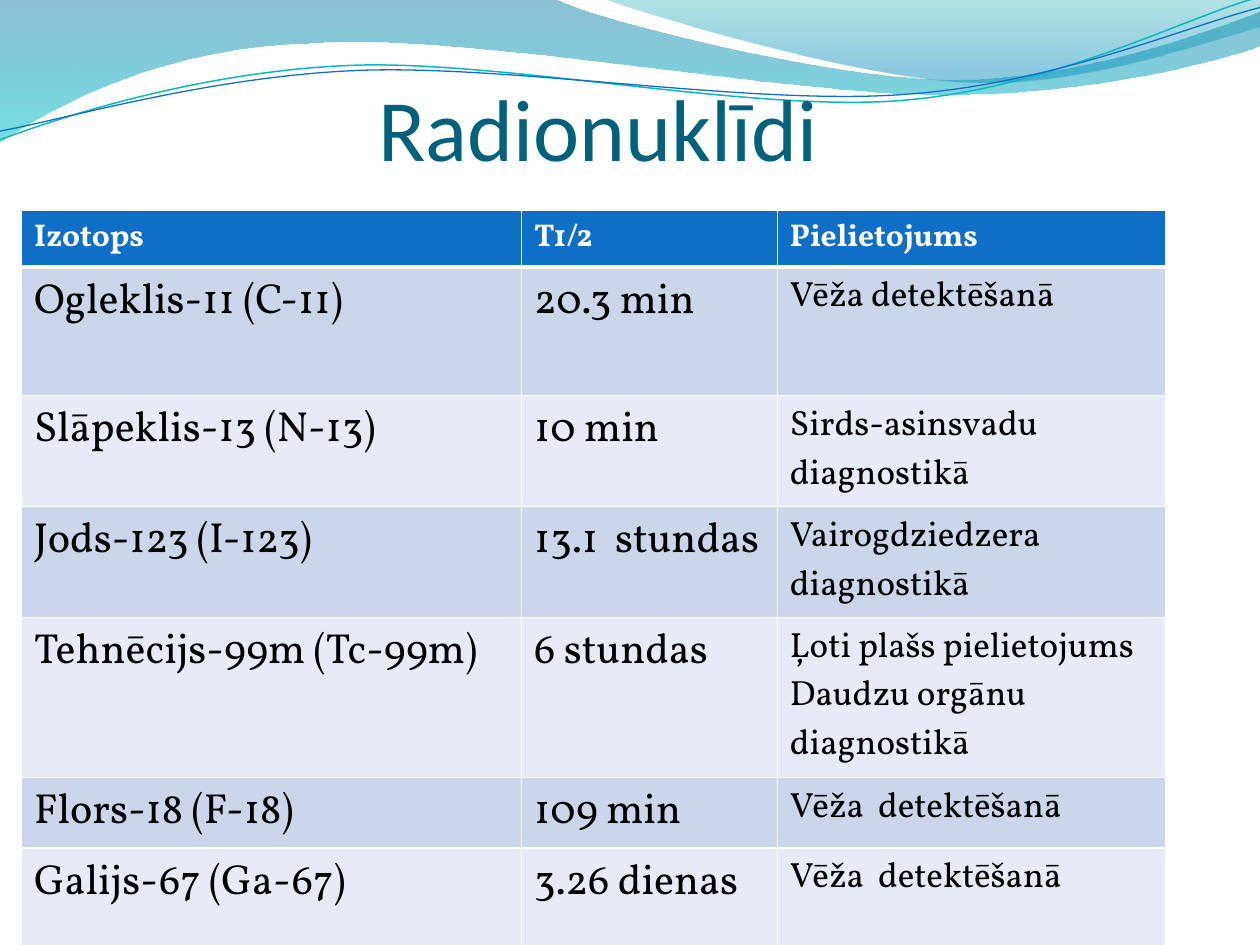
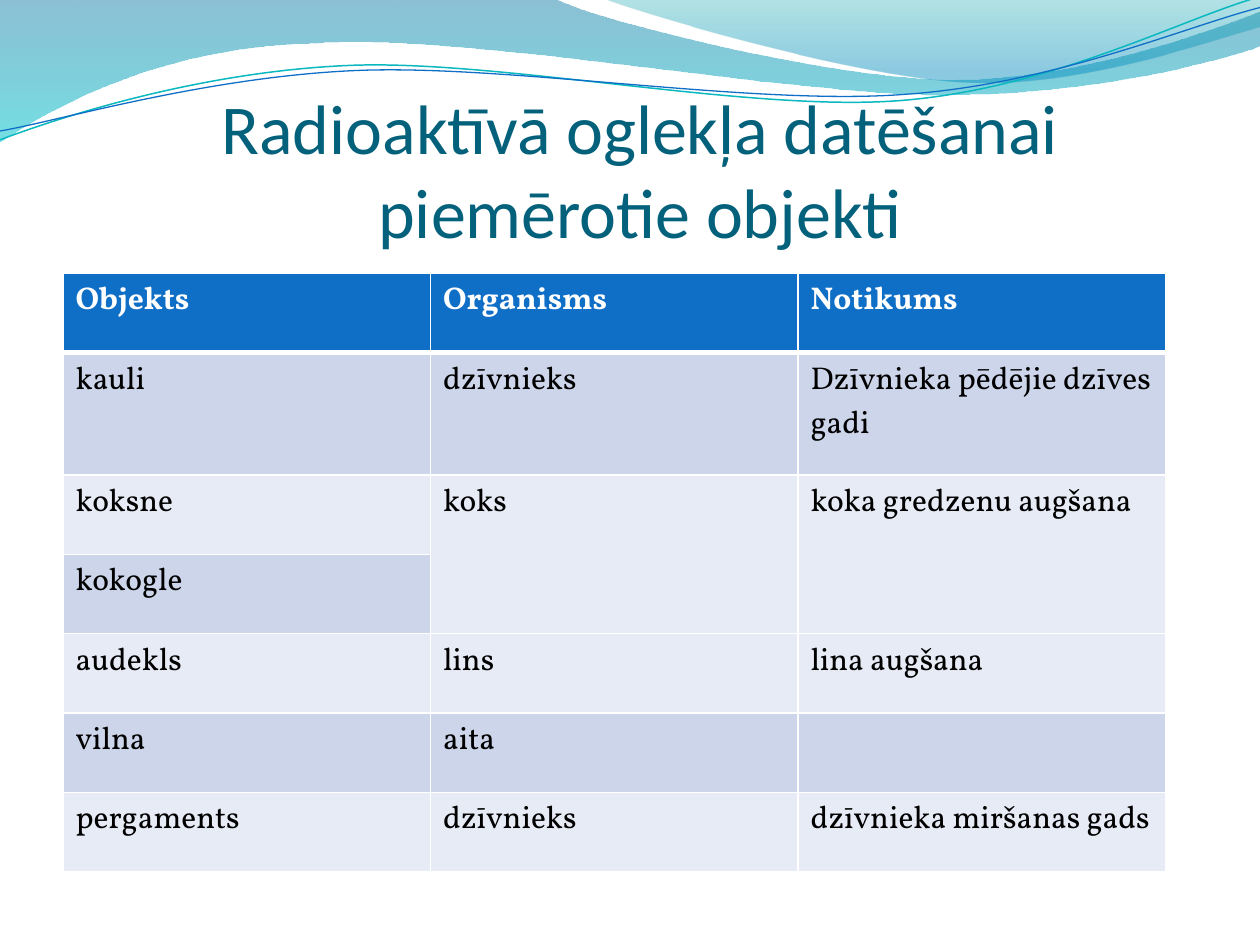
from lxml.etree import SubElement as Sub
from pptx import Presentation
from pptx.dml.color import RGBColor as Rgb
from pptx.enum.text import MSO_ANCHOR as Anchor, PP_ALIGN as Align
from pptx.oxml.ns import qn
from pptx.util import Inches, Pt

WHITE = Rgb(0xFF, 0xFF, 0xFF)
BLACK = Rgb(0x00, 0x00, 0x00)
BLUE = Rgb(0x0F, 0x6F, 0xC6)
DEEP = Rgb(0x04, 0x61, 0x7B)
AQUA = Rgb(0x0A, 0xB8, 0xBF)
DARK = Rgb(0xCC, 0xD5, 0xEA)
PALE = Rgb(0xE7, 0xEB, 0xF5)

BANDS = [
    ([[(0, 0)], [(4.4, -0.01)],
      [(4.76, 0.17), (6.64, 0.63), (7.58, 0.63)],
      [(8.53, 0.63), (9.58, 0.26), (10, 0.09)], [(10.01, 0.36)],
      [(9.83, 0.44), (8.7, 0.76), (7.46, 0.75)],
      [(6.22, 0.75), (3.82, 0.28), (2.57, 0.34)],
      [(1.29, 0.36), (0.46, 0.83), (-0.01, 1.13)], [(0, 0)]],
     [(0, Rgb(0x00, 0x74, 0xA1), 45), (1, Rgb(0x00, 0xC6, 0xCF), 55)]),
    ([[(4.79, -0.01)],
      [(5.09, 0.11), (6.82, 0.62), (7.69, 0.65)],
      [(8.56, 0.69), (9.61, 0.32), (10, 0.21)], [(10, 0)], [(4.79, -0.01)]],
     [(0, Rgb(0x00, 0xA1, 0xA9), 30), (0.8, Rgb(0x00, 0x8B, 0xBF), 45)]),
]
WAVES = [
    ([[(0, 1.11)],
      [(0.48, 0.93), (1.58, 0.57), (2.77, 0.52)],
      [(3.95, 0.47), (5.93, 0.89), (7.13, 0.8)],
      [(8.33, 0.71), (9.38, 0.15), (9.98, -0.02)]], AQUA, 0.85),
    ([[(0, 1.04)],
      [(0.47, 0.96), (1.64, 0.61), (2.83, 0.56)],
      [(4.03, 0.51), (5.97, 0.84), (7.17, 0.75)],
      [(8.36, 0.67), (9.41, 0.21), (10, 0.06)]], BLUE, 0.75),
]

NUCLIDES = [
    ["Izotops", "T1/2", "Pielietojums"],
    ["Ogleklis-11 (C-11)", "20.3 min", "Vēža detektēšanā"],
    ["Slāpeklis-13 (N-13)", "10 min", "Sirds-asinsvadu diagnostikā"],
    ["Jods-123 (I-123)", "13.1  stundas", "Vairogdziedzera diagnostikā"],
    ["Tehnēcijs-99m (Tc-99m)", "6 stundas",
     "Ļoti plašs pielietojums\nDaudzu orgānu diagnostikā"],
    ["Flors-18 (F-18)", "109 min", "Vēža  detektēšanā"],
    ["Galijs-67 (Ga-67)", "3.26 dienas", "Vēža  detektēšanā"],
]
OBJECTS = [
    ["Objekts", "Organisms", "Notikums"],
    ["kauli", "dzīvnieks", "Dzīvnieka pēdējie dzīves gadi"],
    ["koksne", "koks", "koka gredzenu augšana"],
    ["kokogle", "", ""],
    ["audekls", "lins", "lina augšana"],
    ["vilna", "aita", ""],
    ["pergaments", "dzīvnieks", "dzīvnieka miršanas gads"],
]


class Deck:
    def __init__(self):
        self.show = Presentation()
        self.show.slide_width = Inches(10)
        self.show.slide_height = Inches(7.5)
        self.slide = None

    def page(self):
        self.slide = self.show.slides.add_slide(self.show.slide_layouts[6])
        for route, stops in BANDS:
            self.band(route, stops)
        for route, color, width in WAVES:
            self.wave(route, color, width)

    def curve(self, route, close):
        spots = [(Inches(x), Inches(y)) for part in route for x, y in part]
        pen = self.slide.shapes.build_freeform(*spots[0])
        pen.add_line_segments(spots[1:], close=close)
        shape = pen.convert_to_shape()
        shape.shadow.inherit = False
        legs = iter(list(shape.element.iter(qn("a:lnTo"))))
        for part in route[1:]:
            first, *rest = [next(legs) for _ in part]
            if rest:
                bend = first.makeelement(qn("a:cubicBezTo"))
                first.addprevious(bend)
                for leg in (first, *rest):
                    bend.append(leg[0])
                    leg.getparent().remove(leg)
        return shape

    def band(self, route, stops):
        shape = self.curve(route, True)
        shape.line.fill.background()
        shape.fill.gradient()
        shape.fill.gradient_angle = 270
        for stop, (place, color, _) in zip(shape.fill.gradient_stops, stops):
            stop.position = place
            stop.color.rgb = color
        tints = shape.element.spPr.iter(qn("a:srgbClr"))
        for tint, (_, _, alpha) in zip(list(tints), stops):
            Sub(tint, qn("a:alpha"), val=str(alpha * 1000))

    def wave(self, route, color, width):
        shape = self.curve(route, False)
        shape.fill.background()
        shape.line.color.rgb = color
        shape.line.width = Pt(width)

    def style(self, font, color, **form):
        font.color.rgb = color
        for name, value in form.items():
            setattr(font, name, value)

    def title(self, text, left, top, size):
        box = self.slide.shapes.add_textbox(
            Inches(left), Inches(top), Inches(9), Inches(1.25))
        frame = box.text_frame
        form = {"word_wrap": True, "vertical_anchor": Anchor.BOTTOM,
                "margin_left": 0, "margin_top": Inches(0.05),
                "margin_right": 0, "margin_bottom": 0}
        for name, value in form.items():
            setattr(frame, name, value)
        line = frame.paragraphs[0]
        line.text = text
        line.alignment = Align.CENTER
        for run in line.runs:
            self.style(run.font, DEEP, name="Calibri", size=Pt(size))

    def edge(self, cell, row):
        thick = {"L": 1, "R": 1, "T": 3 if row == 1 else 1,
                 "B": 3 if row == 0 else 1}
        for side, width in thick.items():
            line = Sub(cell._tc.get_or_add_tcPr(), qn("a:ln" + side),
                       w=str(Pt(width)))
            fill = Sub(line, qn("a:solidFill"))
            Sub(fill, qn("a:srgbClr"), val=str(WHITE))

    def cell(self, cell, text, row, size):
        self.edge(cell, row)
        head = row == 0
        cell.fill.solid()
        cell.fill.fore_color.rgb = BLUE if head else DARK if row % 2 else PALE
        if not text:
            return
        cell.text = text
        for line in cell.text_frame.paragraphs:
            for run in line.runs:
                self.style(run.font, WHITE if head else BLACK,
                           name="Vollkorn", bold=head,
                           size=Pt(18 if head else size))

    def table(self, data, left, top, wide, high, sizes, spans=()):
        grid = self.slide.shapes.add_table(
            len(data), len(wide), Inches(left), Inches(top),
            Inches(sum(wide)), Inches(sum(high))).table
        grid.horz_banding = False
        for col, width in zip(grid.columns, wide):
            col.width = Inches(width)
        for row, height in zip(grid.rows, high):
            row.height = Inches(height)
        for r, texts in enumerate(data):
            for c, text in enumerate(texts):
                self.cell(grid.cell(r, c), text, r, sizes[c])
        for first, last in spans:
            grid.cell(*first).merge(grid.cell(*last))


def main():
    deck = Deck()
    deck.page()
    deck.title("Radionuklīdi", 0.25, 0.17, 50)
    deck.table(NUCLIDES, 0.17, 1.67, [3.97, 2.03, 3.08],
               [0.45, 1.02, 0.88, 0.88, 1.27, 0.56, 0.78], [24, 24, 20])

    deck.page()
    deck.title("Radioaktīvā oglekļa datēšanai\vpiemērotie objekti",
               0.58, 0.75, 40)
    deck.table(OBJECTS, 0.5, 2.17, [8.75 / 3] * 3,
               [0.63, 0.97] + [0.63] * 5, [18] * 3,
               [((2, c), (3, c)) for c in (1, 2)])
    deck.show.save("out.pptx")


if __name__ == "__main__":
    main()
